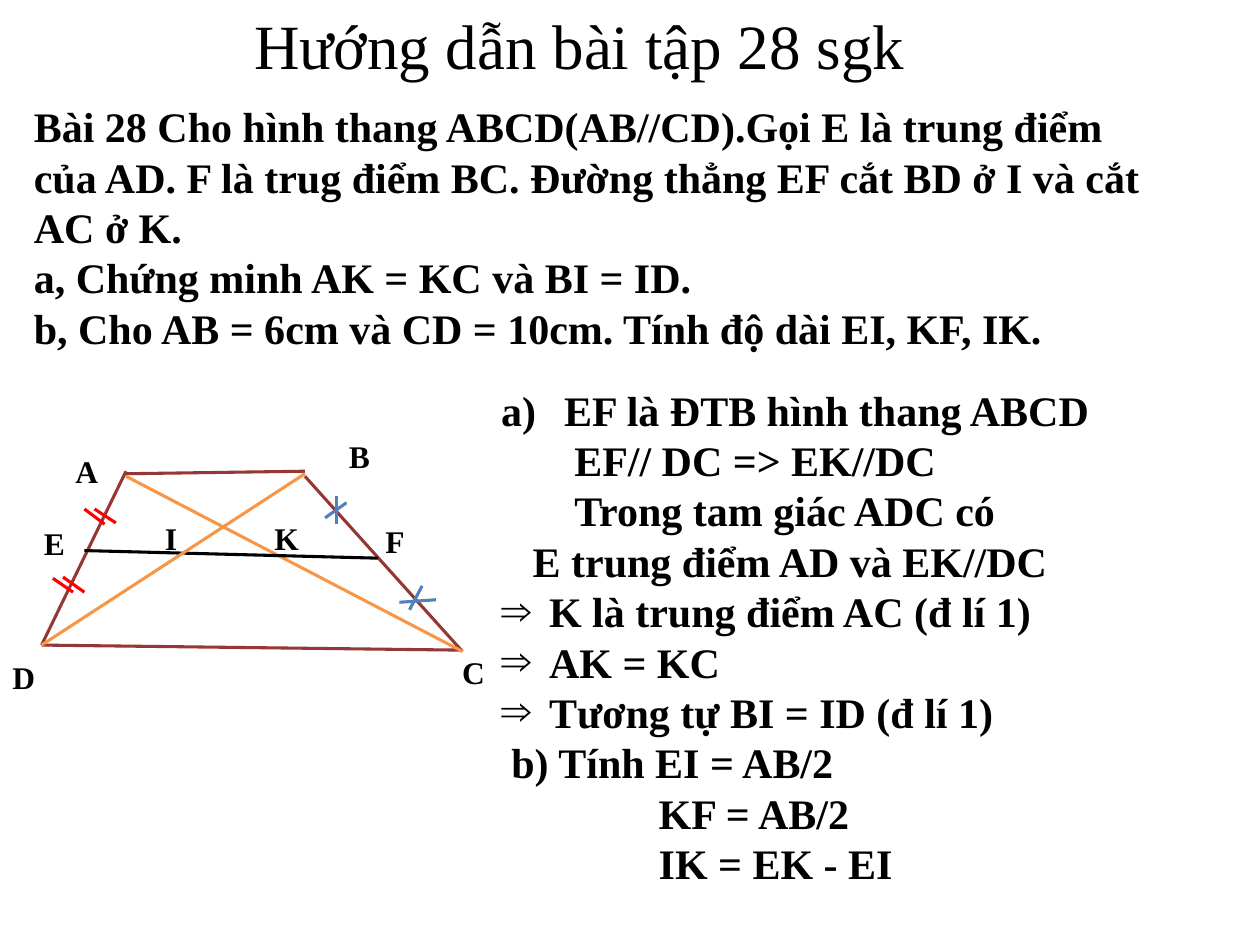
from dataclasses import dataclass

from lxml.etree import SubElement
from pptx import Presentation
from pptx.dml.color import RGBColor
from pptx.enum.shapes import MSO_CONNECTOR as Connector
from pptx.enum.text import MSO_AUTO_SIZE as AutoSize
from pptx.oxml.ns import qn
from pptx.util import Inches, Pt

COLORS = {
    "text": "000000",
    "side": "953735",
    "diagonal": "F79646",
    "midline": "000000",
    "left_tick": "FF0000",
    "right_tick": "4F81BD",
}
FONT = "Times New Roman"


@dataclass(frozen=True)
class Line:
    text: str
    margin: float = 0
    hanging: float = 0
    bullet: str = ""


@dataclass(frozen=True)
class Label:
    text: str
    left: float
    top: float
    width: float = 0.33


@dataclass(frozen=True)
class Segment:
    start: tuple[float, float]
    end: tuple[float, float]
    color: str


PROBLEM = [
    Line("Bài 28 Cho hình thang ABCD(AB//CD).Gọi E là trung điểm của AD. "
         "F là trug điểm BC. Đường thẳng EF cắt BD ở I và cắt AC ở K."),
    Line("a, Chứng minh AK = KC và BI = ID."),
    Line("b, Cho AB = 6cm và CD = 10cm. Tính độ dài EI, KF, IK."),
]

SOLUTION = [
    Line("EF là ĐTB hình thang ABCD", 0.5, 0.5, "a)"),
    Line("EF// DC => EK//DC", 0.58),
    Line("Trong tam giác ADC có", 0.58),
    Line("E trung điểm AD và EK//DC", 0.25),
    Line("K là trung điểm AC (đ lí 1)", 0.38, 0.38, "⇒"),
    Line("AK = KC", 0.38, 0.38, "⇒"),
    Line("Tương tự BI = ID (đ lí 1)", 0.38, 0.38, "⇒"),
    Line("b) Tính EI = AB/2", 0.08),
    Line("KF = AB/2", 1.25),
    Line("IK = EK - EI", 1.25),
]

SEGMENTS = [
    Segment((0.33, 5.12), (1, 3.74), "side"),
    Segment((1, 3.76), (2.42, 3.74), "side"),
    Segment((0.33, 5.12), (3.67, 5.16), "side"),
    Segment((3.67, 5.17), (2.42, 3.78), "side"),
    Segment((1, 3.78), (3.67, 5.17), "diagonal"),
    Segment((0.67, 4.37), (3, 4.43), "midline"),
    Segment((0.75, 4.04), (0.92, 4.15), "left_tick"),
    Segment((0.67, 4.04), (0.83, 4.16), "left_tick"),
    Segment((0.5, 4.58), (0.67, 4.7), "left_tick"),
    Segment((0.42, 4.59), (0.58, 4.7), "left_tick"),
    Segment((3.35, 4.65), (3.25, 4.84), "right_tick"),
    Segment((3.17, 4.78), (3.46, 4.76), "right_tick"),
    Segment((2.75, 3.99), (2.58, 4.11), "right_tick"),
    Segment((2.67, 3.94), (2.67, 4.16), "right_tick"),
    Segment((2.42, 3.76), (0.33, 5.12), "diagonal"),
]

LABELS = [
    Label("A", 0.5, 3.54),
    Label("B", 2.67, 3.42),
    Label("C", 3.57, 5.13),
    Label("D", 0, 5.17, 0.5),
    Label("E", 0.25, 4.11),
    Label("K", 2.08, 4.07),
    Label("F", 2.96, 4.09),
    Label("I", 1.21, 4.07),
]


def format_indent(paragraph, line: Line) -> None:
    properties = paragraph._p.get_or_add_pPr()
    properties.set("marL", str(Inches(line.margin)))
    properties.set("indent", str(-Inches(line.hanging)))
    if line.bullet == "a)":
        SubElement(properties, qn("a:buFont"), typeface="+mj-lt")
        SubElement(properties, qn("a:buAutoNum"), type="alphaLcParenR")
    elif line.bullet:
        SubElement(properties, qn("a:buFont"), typeface=FONT)
        SubElement(properties, qn("a:buChar"), char=line.bullet)


def add_text(shapes, lines: list[Line], *, left: float, top: float, width: float,
             height: float, size: float, bold: bool = True) -> None:
    shape = shapes.add_textbox(Inches(left), Inches(top), Inches(width), Inches(height))
    frame = shape.text_frame
    frame.word_wrap = True
    frame.auto_size = AutoSize.SHAPE_TO_FIT_TEXT
    for index, line in enumerate(lines):
        paragraph = frame.add_paragraph() if index else frame.paragraphs[0]
        format_indent(paragraph, line)
        run = paragraph.add_run()
        run.text = line.text
        run.font.name = FONT
        run.font.size = Pt(size)
        run.font.bold = bold
        run.font.color.rgb = RGBColor.from_string(COLORS["text"])


def add_segment(shapes, segment: Segment) -> None:
    points = [Inches(value) for value in segment.start + segment.end]
    connector = shapes.add_connector(Connector.STRAIGHT, *points)
    connector.line.width = Pt(1.75)
    connector.line.color.rgb = RGBColor.from_string(COLORS[segment.color])
    SubElement(connector._element.spPr, qn("a:effectLst"))


def main() -> None:
    presentation = Presentation()
    presentation.slide_width = Inches(10)
    presentation.slide_height = Inches(7.5)
    slide = presentation.slides.add_slide(presentation.slide_layouts[6])

    add_text(slide.shapes, [Line("Hướng dẫn bài tập 28 sgk")],
             left=1.92, top=0, width=5.5, height=0.71, size=36, bold=False)
    add_text(slide.shapes, PROBLEM, left=0.17, top=0.75, width=9.25, height=2.12, size=24)

    trapezoid = slide.shapes.add_group_shape()
    for segment in SEGMENTS:
        add_segment(trapezoid.shapes, segment)
    for label in LABELS:
        add_text(trapezoid.shapes, [Line(label.text)], left=label.left, top=label.top,
                 width=label.width, height=0.4, size=18)

    add_text(slide.shapes, SOLUTION, left=3.88, top=3, width=5.53, height=4.14, size=24)
    presentation.save("out.pptx")


if __name__ == "__main__":
    main()
